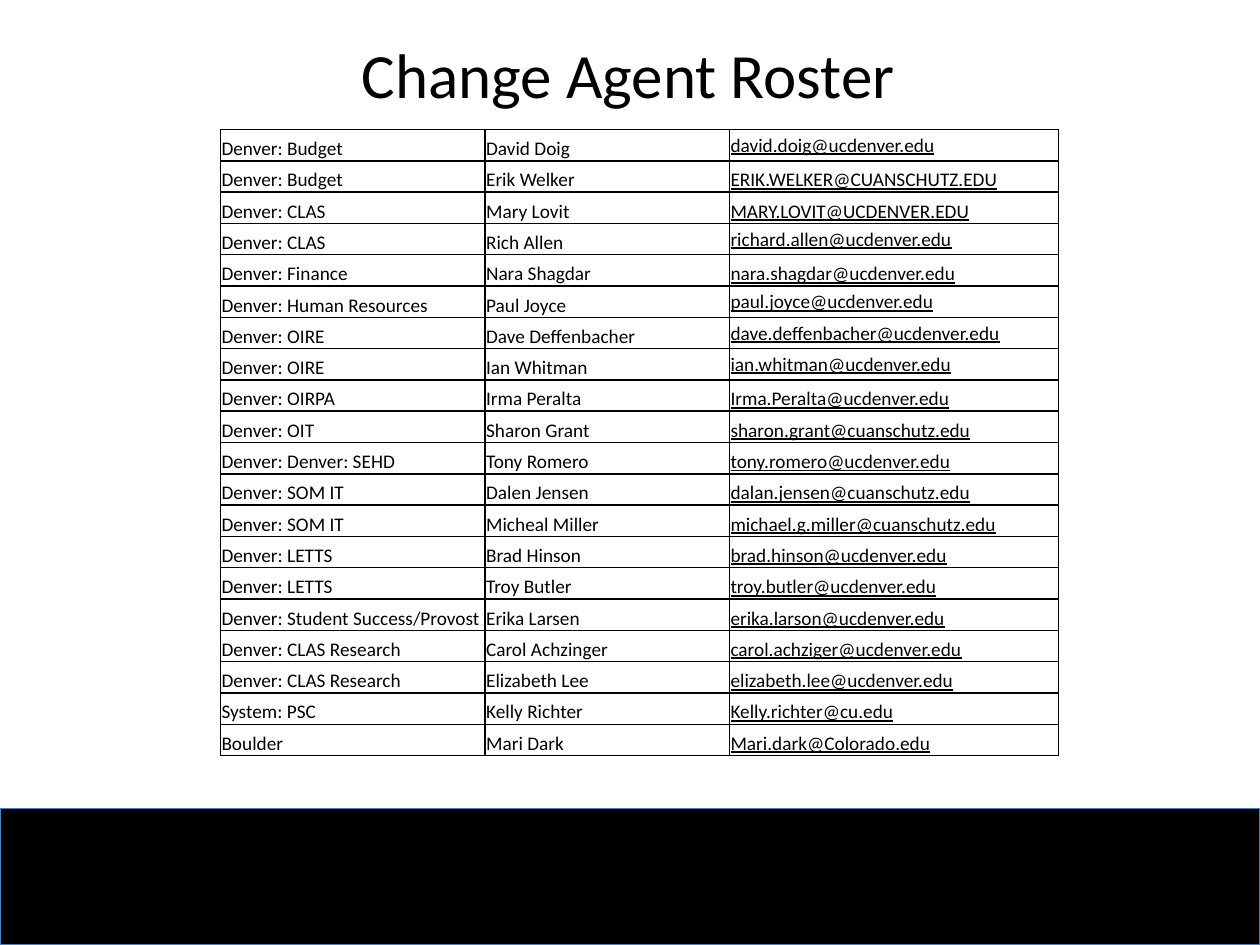
from lxml import etree
from pptx import Presentation
from pptx.dml.color import RGBColor
from pptx.enum.shapes import MSO_SHAPE
from pptx.enum.text import MSO_ANCHOR, PP_ALIGN
from pptx.oxml.ns import qn
from pptx.util import Pt

RECT = MSO_SHAPE.RECTANGLE
MIDDLE, BOTTOM = MSO_ANCHOR.MIDDLE, MSO_ANCHOR.BOTTOM
CENTER = PP_ALIGN.CENTER
BLACK = "000000"
WIDTHS = [151.2, 139.68, 187.92]
HEIGHT = 17.9
RAISED = {0, 3, 5, 6, 7}  # rows whose address sits mid-cell
ROSTER = [
    ("Denver: Budget", "David Doig", "david.doig@ucdenver.edu"),
    ("Denver: Budget", "Erik Welker", "ERIK.WELKER@CUANSCHUTZ.EDU"),
    ("Denver: CLAS", "Mary Lovit", "MARY.LOVIT@UCDENVER.EDU"),
    ("Denver: CLAS", "Rich Allen", "richard.allen@ucdenver.edu"),
    ("Denver: Finance", "Nara Shagdar", "nara.shagdar@ucdenver.edu"),
    ("Denver: Human Resources", "Paul Joyce", "paul.joyce@ucdenver.edu"),
    ("Denver: OIRE", "Dave Deffenbacher", "dave.deffenbacher@ucdenver.edu"),
    ("Denver: OIRE", "Ian Whitman", "ian.whitman@ucdenver.edu"),
    ("Denver: OIRPA", "Irma Peralta", "Irma.Peralta@ucdenver.edu"),
    ("Denver: OIT", "Sharon Grant", "sharon.grant@cuanschutz.edu"),
    ("Denver: Denver: SEHD", "Tony Romero", "tony.romero@ucdenver.edu"),
    ("Denver: SOM IT", "Dalen Jensen", "dalan.jensen@cuanschutz.edu"),
    ("Denver: SOM IT", "Micheal Miller", "michael.g.miller@cuanschutz.edu"),
    ("Denver: LETTS", "Brad Hinson", "brad.hinson@ucdenver.edu"),
    ("Denver: LETTS", "Troy Butler", "troy.butler@ucdenver.edu"),
    ("Denver: Student Success/Provost", "Erika Larsen", "erika.larson@ucdenver.edu"),
    ("Denver: CLAS Research", "Carol Achzinger", "carol.achziger@ucdenver.edu"),
    ("Denver: CLAS Research", "Elizabeth Lee", "elizabeth.lee@ucdenver.edu"),
    ("System: PSC", "Kelly Richter", "Kelly.richter@cu.edu"),
    ("Boulder", "Mari Dark", "Mari.dark@Colorado.edu"),
]


def color(code):
    return RGBColor.from_string(code)


def write(para, text, size):
    run = para.add_run()
    run.text = text
    run.font.name = "Calibri"
    run.font.size = Pt(size)
    run.font.color.rgb = color(BLACK)
    return run


deck = Presentation()
deck.slide_width, deck.slide_height = Pt(720), Pt(540)
slide = deck.slides.add_slide(deck.slide_layouts[6])

band = slide.shapes.add_shape(RECT, Pt(0), Pt(462), Pt(720), Pt(78))
band.shadow.inherit = False
band.fill.solid()
band.fill.fore_color.rgb = color(BLACK)
band.line.color.rgb = color("4B7EBC")
band.line.width = Pt(0.75)

title = slide.shapes.add_textbox(Pt(35), Pt(9.5), Pt(648), Pt(65)).text_frame
title.word_wrap = True
title.vertical_anchor = MIDDLE
title.paragraphs[0].alignment = CENTER
write(title.paragraphs[0], "Change Agent Roster", 36)

table = slide.shapes.add_table(
    len(ROSTER), len(WIDTHS), Pt(126), Pt(74), Pt(sum(WIDTHS)), Pt(HEIGHT * len(ROSTER))
).table
table.first_row = table.horz_banding = False
for col, width in zip(table.columns, WIDTHS):
    col.width = Pt(width)

for r, entry in enumerate(ROSTER):
    table.rows[r].height = Pt(HEIGHT)
    for c, text in enumerate(entry):
        cell = table.cell(r, c)
        mail = c == 2
        cell.margin_left = cell.margin_right = cell.margin_top = Pt(0.6)
        cell.margin_bottom = Pt(0)
        cell.vertical_anchor = MIDDLE if mail and r in RAISED else BOTTOM
        run = write(cell.text_frame.paragraphs[0], text, 11)
        if mail:
            run.font.underline = True
        props = cell._tc.get_or_add_tcPr()
        for side in ("a:lnL", "a:lnR", "a:lnT", "a:lnB"):
            edge = etree.SubElement(props, qn(side), w=str(Pt(1)))
            fill = etree.SubElement(edge, qn("a:solidFill"))
            etree.SubElement(fill, qn("a:srgbClr"), val=BLACK)
        cell.fill.background()

deck.save("out.pptx")
